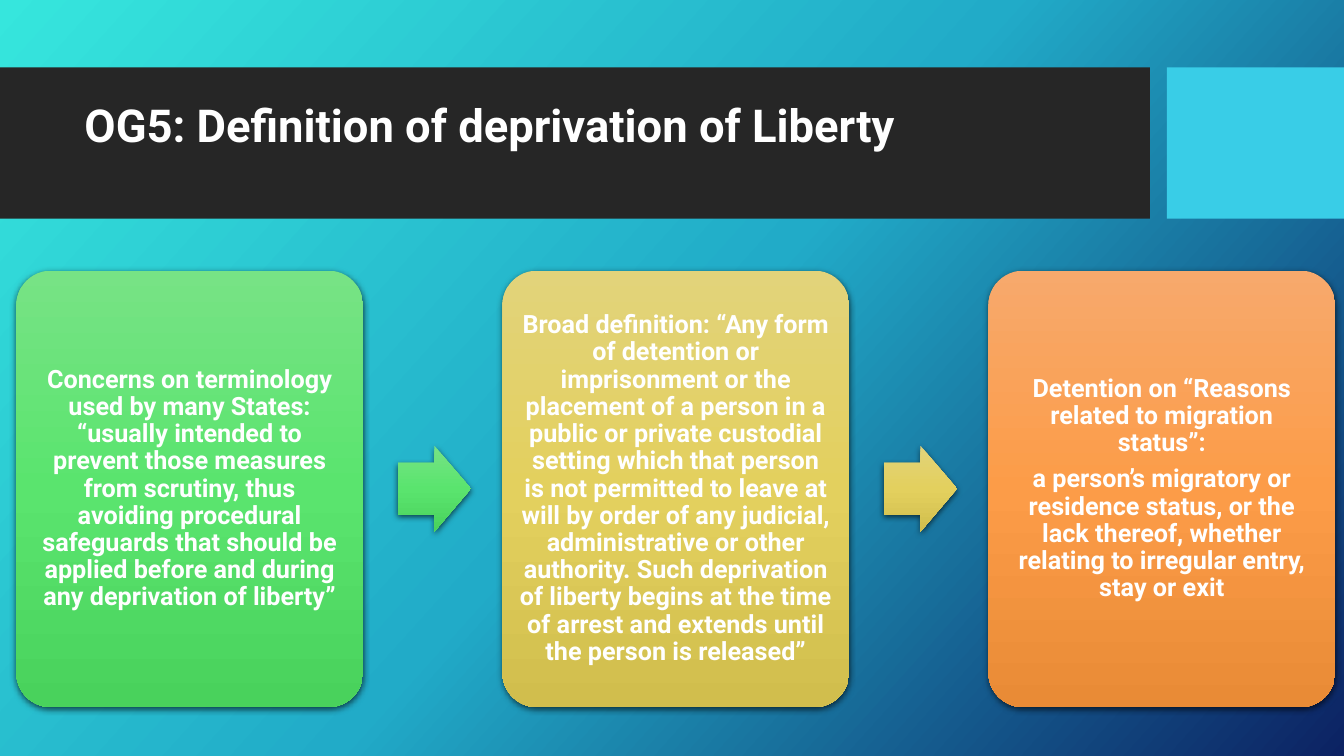
from copy import deepcopy
from lxml import etree
from pptx import Presentation
from pptx.dml.color import RGBColor
from pptx.enum.shapes import MSO_SHAPE
from pptx.enum.text import MSO_ANCHOR, PP_ALIGN
from pptx.oxml.ns import qn
from pptx.util import Cm, Pt

RECT = MSO_SHAPE.RECTANGLE
ROUND = MSO_SHAPE.ROUNDED_RECTANGLE
ARROW = MSO_SHAPE.RIGHT_ARROW
MIDDLE = MSO_ANCHOR.MIDDLE
CENTER = PP_ALIGN.CENTER

COLORS = {
    "back": ["36E6DD", "21ABC8", "0C2263"],
    "green": ["77E385", "5AE46E", "49D25C"],
    "gold": ["E2D37A", "E3D05E", "D1BE4D"],
    "orange": ["F7A96C", "FC9C48", "E98B36"],
    "bar": "262626",
    "block": "39CDE7",
    "text": "FFFFFF",
    "shadow": "000000",
}


def shade(fill, root, tones, angle):
    fill.gradient()
    fill.gradient_angle = angle
    stops = next(root.iter(qn("a:gsLst")))
    stops.append(deepcopy(stops[0]))
    for stop, tone, place in zip(fill.gradient_stops, tones, (0, 0.5, 1)):
        stop.color.rgb = RGBColor.from_string(tone)
        stop.position = place


def write(par, words, size):
    par.line_spacing = 0.9
    run = par.add_run()
    run.text = words
    run.font.name = "Roboto"
    run.font.size = Pt(size)
    run.font.bold = True
    run.font.color.rgb = RGBColor.from_string(COLORS["text"])


prs = Presentation()
prs.slide_width = Cm(33.87)
prs.slide_height = Cm(19.05)
slide = prs.slides.add_slide(prs.slide_layouts[6])
shade(slide.background.fill, slide.element, COLORS["back"], 318)

for name, left, width in [("bar", 0, 28.98), ("block", 29.41, 4.46)]:
    band = slide.shapes.add_shape(RECT, Cm(left), Cm(1.7), Cm(width), Cm(3.81))
    band.shadow.inherit = False
    band.fill.solid()
    band.fill.fore_color.rgb = RGBColor.from_string(COLORS[name])
    band.line.fill.background()

title = slide.shapes.add_textbox(Cm(1.88), Cm(2.49), Cm(26.7), Cm(2.62))
title.text_frame.word_wrap = True
write(title.text_frame.paragraphs[0], "OG5: Definition of deprivation of Liberty", 32.4)

cards = [
    ("green", [
        "Concerns on terminology used by many States: “usually intended to "
        "prevent those measures from scrutiny, thus avoiding procedural "
        "safeguards that should be applied before and during any deprivation "
        "of liberty”",
    ]),
    ("gold", [
        "Broad definition: “Any form of detention or imprisonment or the "
        "placement of a person in a public or private custodial setting which "
        "that person is not permitted to leave at will by order of any "
        "judicial, administrative or other authority. Such deprivation of "
        "liberty begins at the time of arrest and extends until the person is "
        "released”",
    ]),
    ("orange", [
        "Detention on “Reasons related to migration status”:",
        "a person’s migratory or residence status, or the lack thereof, "
        "whether relating to irregular entry, stay or exit",
    ]),
]

for index, (tone, texts) in enumerate(cards):
    left = 0.41 + index * 12.25
    card = slide.shapes.add_shape(ROUND, Cm(left), Cm(6.82), Cm(8.74), Cm(11))
    card.adjustments[0] = 0.1
    parts = [card]
    if index < len(cards) - 1:
        arrow = slide.shapes.add_shape(
            ARROW, Cm(left + 9.61), Cm(11.23), Cm(1.85), Cm(2.17))
        arrow.adjustments[0] = 0.6
        arrow.adjustments[1] = 0.5
        parts.append(arrow)

    for part in parts:
        shade(part.fill, part.element, COLORS[tone], 270)
        part.line.fill.background()
        part.shadow.inherit = False
        effects = next(part.element.iter(qn("a:effectLst")))
        outer = etree.SubElement(
            effects, qn("a:outerShdw"), blurRad=str(Pt(4.5)),
            dist=str(Pt(1.5)), dir="5400000", algn="ctr", rotWithShape="0")
        color = etree.SubElement(outer, qn("a:srgbClr"), val=COLORS["shadow"])
        etree.SubElement(color, qn("a:alpha"), val="63000")

    frame = card.text_frame
    frame.word_wrap = True
    frame.vertical_anchor = MIDDLE
    frame.margin_left = frame.margin_right = Cm(0.18)
    frame.margin_top = frame.margin_bottom = Cm(0.18)
    for row, words in enumerate(texts):
        par = frame.add_paragraph() if row else frame.paragraphs[0]
        par.alignment = CENTER
        par.space_after = Pt(6.3)
        write(par, words, 18)

prs.save("out.pptx")
